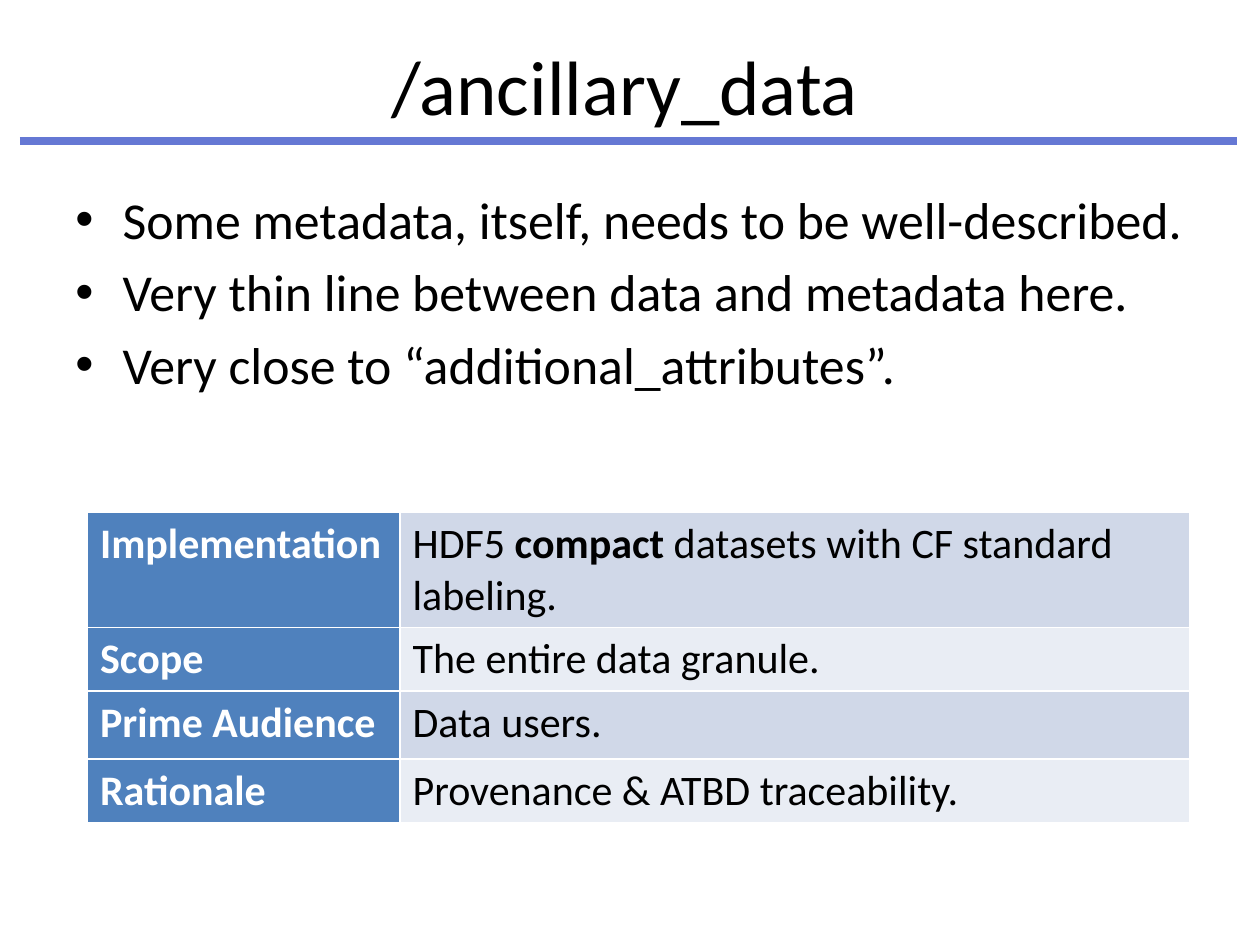
from lxml import etree
from pptx import Presentation
from pptx.dml.color import RGBColor
from pptx.enum import shapes, text
from pptx.oxml import ns
from pptx.util import Pt


def color(value):
    return RGBColor.from_string(value)


def add_xml(parent, tag, **attributes):
    return etree.SubElement(parent, ns.qn(tag), attributes)


class SlideBuilder:
    FONT = "Calibri"
    BLACK, WHITE = "000000", "FFFFFF"
    RULE = "6578D4"
    HEADER = "4F81BD"
    BANDS = ("D0D8E8", "E9EDF4")

    def __init__(self, slide):
        self.slide = slide

    def style(self, font, size, ink=BLACK, bold=False):
        font.name, font.size, font.bold = self.FONT, Pt(size), bold
        font.color.rgb = color(ink)

    def frame(self, left, top, width, height):
        box = self.slide.shapes.add_textbox(Pt(left), Pt(top), Pt(width), Pt(height))
        box.text_frame.word_wrap = True
        return box.text_frame

    def rule(self, left, right, y, weight):
        line = self.slide.shapes.add_connector(
            shapes.MSO_CONNECTOR.STRAIGHT, Pt(left), Pt(y), Pt(right), Pt(y))
        line.line.color.rgb = color(self.RULE)
        line.line.width = Pt(weight)
        add_xml(line._element.spPr, "a:effectLst")

    def title(self, wording, *place):
        frame = self.frame(*place)
        frame.vertical_anchor = text.MSO_ANCHOR.MIDDLE
        frame.text = wording
        heading = frame.paragraphs[0]
        heading.alignment = text.PP_ALIGN.CENTER
        self.style(heading.runs[0].font, 44)

    def bullets(self, points, *place, size=29.6, indent=27):
        frame = self.frame(*place)
        frame.margin_right = 0
        frame.text = "\n".join(points)
        for index, point in enumerate(frame.paragraphs):
            if index:
                point.space_before = Pt(size * 0.2)
            properties = point._p.get_or_add_pPr()
            properties.set("marL", str(Pt(indent)))
            properties.set("indent", str(Pt(-indent)))
            add_xml(properties, "a:buFont", typeface="Arial")
            add_xml(properties, "a:buChar", char="•")
            self.style(point.runs[0].font, size)

    def cell(self, cell, pieces, fill, ink, bold_pieces):
        cell.fill.solid()
        cell.fill.fore_color.rgb = color(fill)
        paragraph = cell.text_frame.paragraphs[0]
        for piece in pieces:
            run = paragraph.add_run()
            run.text = piece
            self.style(run.font, 24, ink, piece in bold_pieces)
        self.borders(cell)

    def borders(self, cell):
        properties = cell._tc.get_or_add_tcPr()
        for index, side in enumerate(("a:lnL", "a:lnR", "a:lnT", "a:lnB")):
            line = etree.Element(ns.qn(side), w=str(Pt(1)))
            add_xml(add_xml(line, "a:solidFill"), "a:srgbClr", val=self.WHITE)
            properties.insert(index, line)

    def table(self, rows, left, top, widths, heights):
        table = self.slide.shapes.add_table(
            len(rows), len(widths), Pt(left), Pt(top),
            Pt(sum(widths)), Pt(sum(heights))).table
        table.first_row = table.horz_banding = False
        for column, width in zip(table.columns, widths):
            column.width = Pt(width)
        for index, (label, pieces, strong) in enumerate(rows):
            table.rows[index].height = Pt(heights[index])
            self.cell(table.cell(index, 0), [label], self.HEADER, self.WHITE, [label])
            self.cell(table.cell(index, 1), pieces, self.BANDS[index % 2],
                      self.BLACK, strong)


def main():
    deck = Presentation()
    deck.slide_width, deck.slide_height = Pt(720), Pt(540)
    builder = SlideBuilder(deck.slides.add_slide(deck.slide_layouts[6]))

    builder.rule(11.4, 707, 80.5, 4.5)
    builder.title("/ancillary_data", 71.3, 3.6, 571.7, 90)
    builder.bullets([
        "Some metadata, itself, needs to be well-described.",
        "Very thin line between data and metadata here.",
        "Very close to “additional_attributes”.",
    ], 36, 103.7, 648, 161.3)
    builder.table([
        ("Implementation",
         ["HDF5 ", "compact", " datasets with CF standard labeling."], ["compact"]),
        ("Scope", ["The entire data granule."], []),
        ("Prime Audience", ["Data users."], []),
        ("Rationale", ["Provenance & ATBD traceability."], []),
    ], 50, 293, widths=(178.6, 451.4), heights=(65.5, 36.5, 38.9, 36.5))

    deck.save("out.pptx")


if __name__ == "__main__":
    main()
